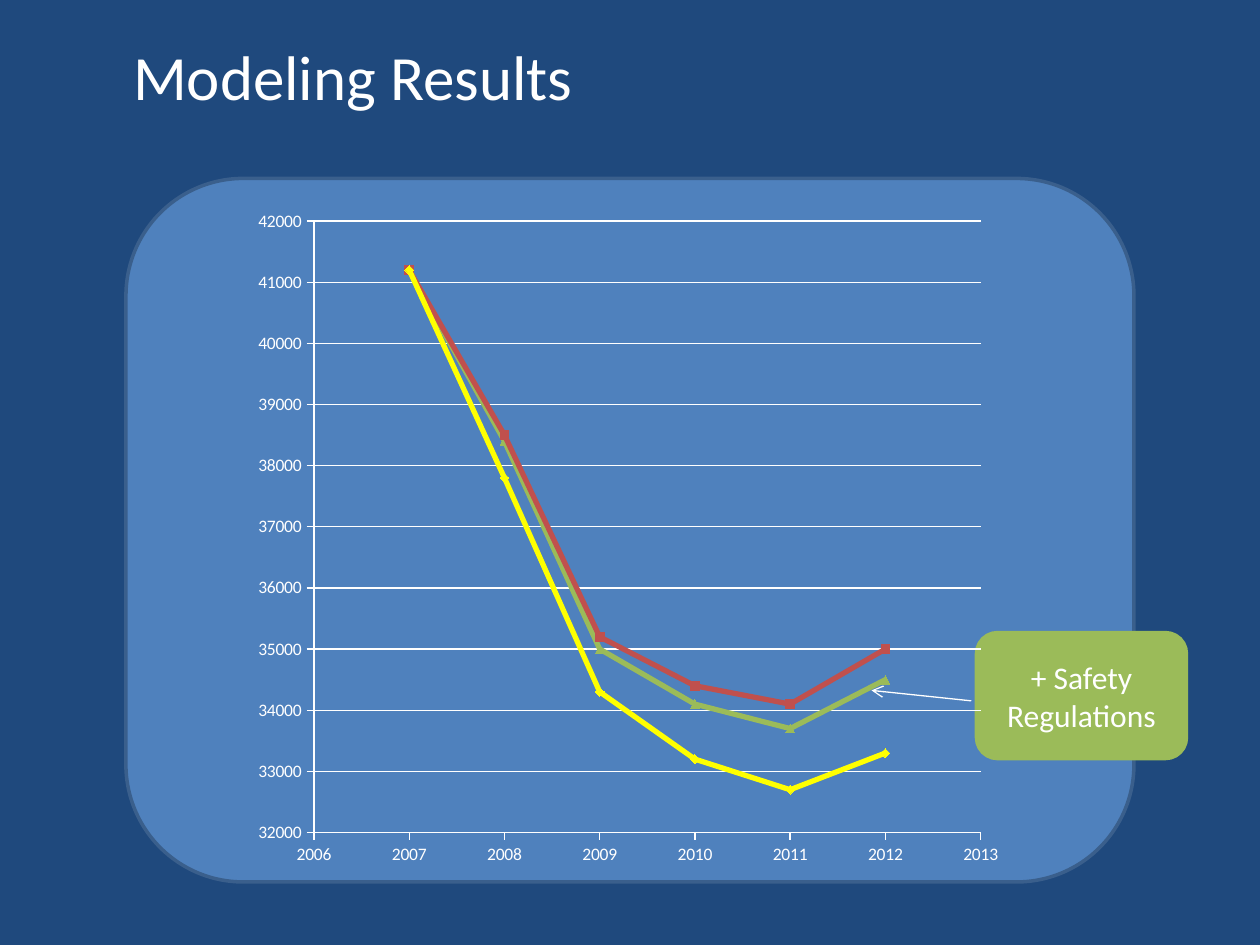
import pptx
import pptx.chart.data
import pptx.dml.color
import pptx.enum.chart
import pptx.enum.shapes
import pptx.enum.text
import pptx.oxml
import pptx.oxml.ns
import pptx.util

Pt = pptx.util.Pt
FONT = "Calibri"
WHITE, YELLOW, RED, GREEN = "FFFFFF", "FFFF00", "C0504D", "9BBB59"
YEARS = range(2007, 2013)
MARKER = pptx.enum.chart.XL_MARKER_STYLE
SERIES = [
    ("Series 1", YELLOW, MARKER.DIAMOND, (41200, 37800, 34300, 33200, 32700, 33300)),
    ("Series 2", RED, MARKER.SQUARE, (41200, 38500, 35200, 34400, 34100, 35000)),
    ("Series 3", GREEN, MARKER.TRIANGLE, (41200, 38400, 35000, 34100, 33700, 34500)),
]


def color(value):
    return pptx.dml.color.RGBColor.from_string(value)


def xml(tag, *prefixes, inner=""):
    ns = pptx.oxml.ns.nsdecls(*prefixes)
    return pptx.oxml.parse_xml(f"<{tag} {ns}>{inner}</{tag}>")


def paint_fill(fill, value):
    fill.solid()
    fill.fore_color.rgb = color(value)


def paint_line(line, value, width):
    paint_fill(line.fill, value)
    line.width = Pt(width)


def set_font(font, size):
    font.name = FONT
    font.size = Pt(size)
    font.color.rgb = color(WHITE)


def write(p, text, size):
    r = p.add_run()
    r.text = text
    set_font(r.font, size)


def add_title(s, left, top, width, height):
    sp = s.shapes.add_textbox(Pt(left), Pt(top), Pt(width), Pt(height))
    sp.text_frame.word_wrap = True
    write(sp.text_frame.paragraphs[0], "Modeling Results", 36)


def add_panel(s, left, top, width, height, fill, line):
    sp = s.shapes.add_shape(pptx.enum.shapes.MSO_SHAPE.ROUNDED_RECTANGLE,
                            Pt(left), Pt(top), Pt(width), Pt(height))
    sp.shadow.inherit = False
    paint_fill(sp.fill, fill)
    paint_line(sp.line, line, 2)
    return sp


def style_axis(axis, low, high, step):
    axis.minimum_scale, axis.maximum_scale, axis.major_unit = low, high, step
    axis.major_tick_mark = pptx.enum.chart.XL_TICK_MARK.OUTSIDE
    axis.minor_tick_mark = pptx.enum.chart.XL_TICK_MARK.NONE
    axis.tick_labels.number_format = "General"
    axis.tick_labels.number_format_is_linked = False
    paint_line(axis.format.line, WHITE, 0.75)


def set_plot_box(chart, x, y, w, h):
    values = {"layoutTarget": "inner", "xMode": "edge", "yMode": "edge",
              "x": x, "y": y, "w": w, "h": h}
    parts = "".join(f'<c:{k} val="{v}"/>' for k, v in values.items())
    layout = xml("c:layout", "c", inner=f"<c:manualLayout>{parts}</c:manualLayout>")
    area = chart.element.find(".//" + pptx.oxml.ns.qn("c:plotArea"))
    old = area.find(pptx.oxml.ns.qn("c:layout"))
    if old is not None:
        area.remove(old)
    area.insert(0, layout)


def add_results_chart(s, left, top, width, height):
    data = pptx.chart.data.XyChartData()
    for name, _, _, values in SERIES:
        series = data.add_series(name)
        for year, value in zip(YEARS, values):
            series.add_data_point(year, value)
    chart = s.shapes.add_chart(pptx.enum.chart.XL_CHART_TYPE.XY_SCATTER_SMOOTH,
                               Pt(left), Pt(top), Pt(width), Pt(height), data).chart
    chart.has_legend = False
    chart.has_title = False
    set_font(chart.font, 10)
    style_axis(chart.category_axis, 2006, 2013, 1)
    style_axis(chart.value_axis, 32000, 42000, 1000)
    chart.category_axis.has_major_gridlines = False
    chart.value_axis.has_major_gridlines = True
    paint_line(chart.value_axis.major_gridlines.format.line, WHITE, 0.75)
    plot = chart.plots[0]
    plot.vary_by_categories = False
    for series, (_, value, style, _) in zip(plot.series, SERIES):
        series.smooth = True
        paint_line(series.format.line, value, 3)
        series.marker.style = style
        series.marker.size = 5
        paint_fill(series.marker.format.fill, value)
        paint_line(series.marker.format.line, value, 0.75)
    set_plot_box(chart, 0.08, 0.04, 0.86, 0.91)


def add_callout(s, left, top, width, height):
    sp = add_panel(s, left, top, width, height, GREEN, GREEN)
    tf = sp.text_frame
    tf.word_wrap = True
    tf.vertical_anchor = pptx.enum.text.MSO_ANCHOR.MIDDLE
    for i, text in enumerate(("+ Safety", "Regulations")):
        p = tf.add_paragraph() if i else tf.paragraphs[0]
        p.alignment = pptx.enum.text.PP_ALIGN.CENTER
        write(p, text, 18)


def add_arrow(s, x1, y1, x2, y2):
    sp = s.shapes.add_connector(pptx.enum.shapes.MSO_CONNECTOR.STRAIGHT,
                                Pt(x1), Pt(y1), Pt(x2), Pt(y2))
    paint_line(sp.line, WHITE, 0.75)
    tail = xml("a:tailEnd", "a")
    tail.set("type", "arrow")
    sp.line._get_or_add_ln().append(tail)
    sp.element.spPr.append(xml("a:effectLst", "a"))


def main():
    prs = pptx.Presentation()
    prs.slide_width, prs.slide_height = Pt(720), Pt(540)
    s = prs.slides.add_slide(prs.slide_layouts[6])
    paint_fill(s.background.fill, "1F497D")
    add_title(s, 69, 18, 570, 51)
    add_panel(s, 72, 102, 576, 402, "4F81BD", "3A5F8C")
    add_callout(s, 558, 361.5, 120, 72)
    add_results_chart(s, 144, 111, 443, 384)
    add_arrow(s, 555, 400.5, 498, 394.5)
    prs.save("out.pptx")


if __name__ == "__main__":
    main()
